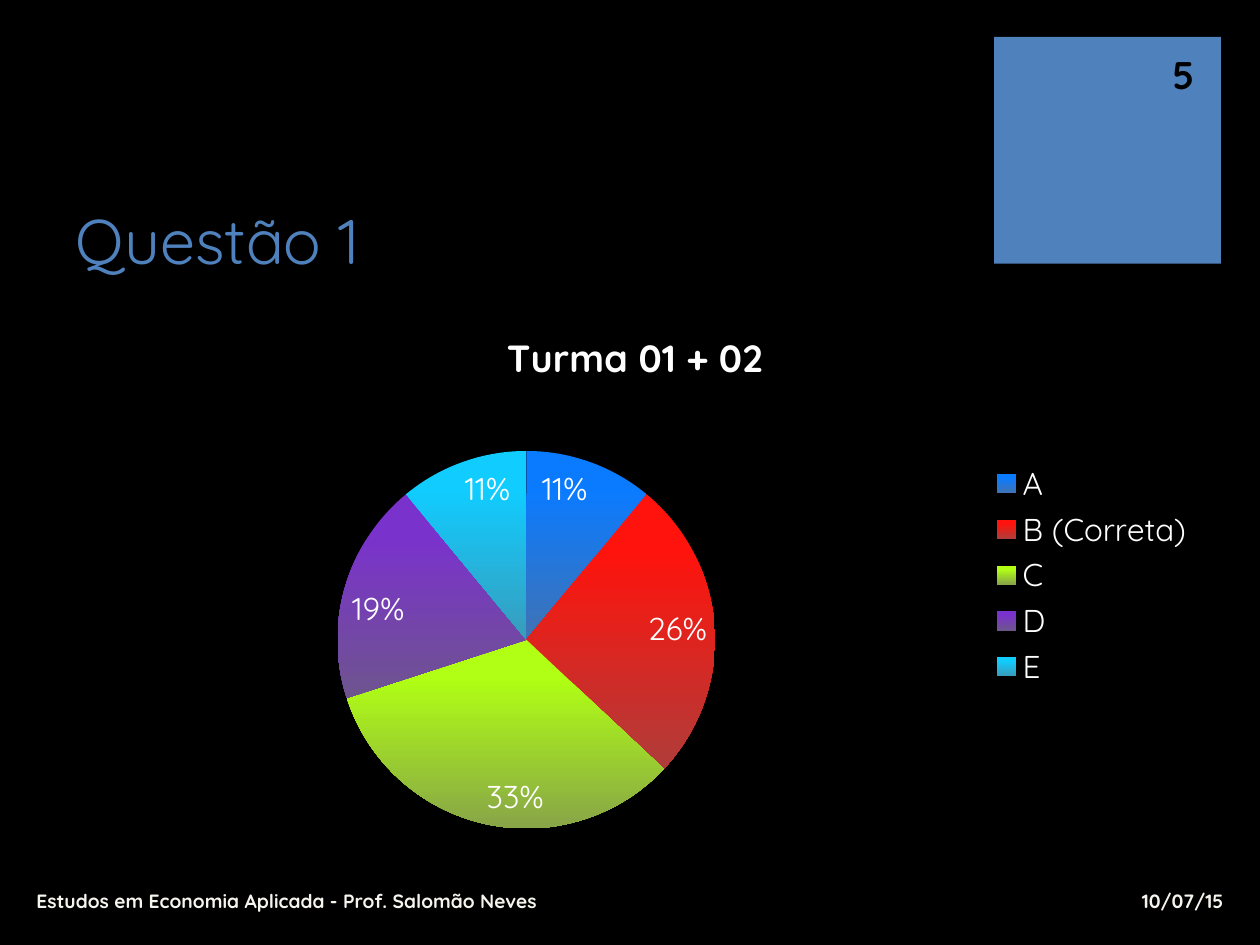
from pptx import Presentation
from pptx import util as u
from pptx.chart import data
from pptx.dml.color import RGBColor
from pptx.enum import chart as ch, shapes, text
from pptx.oxml import parse_xml
from pptx.oxml.ns import nsdecls

WIDE, HIGH = 10, 7.5
FONT = "Quicksand"
HUES = {"back": "000000", "box": "4F81BD", "foot": "F5F4ED", "light": "FFFFFF"}
LEFT, RIGHT = text.PP_ALIGN.LEFT, text.PP_ALIGN.RIGHT
MID, LOW = text.MSO_ANCHOR.MIDDLE, text.MSO_ANCHOR.BOTTOM

TEXTS = [
    ("Questão 1", (0.05, 0.133, 0.712, 0.167), 36, "box", False, LEFT, LOW),
    ("10/07/15", (0.789, 0.927, 0.192, 0.053), 11, "foot", True, RIGHT, MID),
    ("Estudos em Economia Aplicada - Prof. Salomão Neves",
     (0.019, 0.927, 0.657, 0.053), 11, "foot", True, LEFT, MID),
    ("5", (0.903, 0.052, 0.055, 0.053), 22, "back", True, RIGHT, MID),
]
TITLE = "Turma 01 + 02"
SLICES = [
    ("A", 11, "0A7BFF", "4072B4"),
    ("B (Correta)", 26, "FF130C", "B03C3A"),
    ("C", 33, "B0FF14", "88A548"),
    ("D", 19, "7A32CC", "6E548F"),
    ("E", 11, "10CCFF", "389CBC"),
]
PLOT = {"x": 0.24, "y": 0.27, "w": 0.33, "h": 0.7}


def rgb(name):
    return RGBColor.from_string(HUES.get(name, name))


def place(share):
    x, y, w, h = share
    return [u.Inches(n) for n in (x * WIDE, y * HIGH, w * WIDE, h * HIGH)]


def style(font, size, hue, bold=False):
    font.name, font.size, font.bold = FONT, u.Pt(size), bold
    font.color.rgb = rgb(hue)


def write(slide, words, share, size, hue, bold, align, anchor):
    frame = slide.shapes.add_textbox(*place(share)).text_frame
    frame.word_wrap, frame.vertical_anchor = True, anchor
    line = frame.paragraphs[0]
    line.alignment = align
    run = line.add_run()
    run.text = words
    style(run.font, size, hue, bold)


def draw_pie(slide):
    table = data.CategoryChartData()
    table.categories = [row[0] for row in SLICES]
    table.add_series("Series 1", [row[1] for row in SLICES])
    chart = slide.shapes.add_chart(
        ch.XL_CHART_TYPE.PIE, *place((0.05, 0.323, 0.908, 0.571)), table).chart
    style(chart.font, 18, "light")

    chart.has_title = True
    run = chart.chart_title.text_frame.paragraphs[0].add_run()
    run.text = TITLE
    style(run.font, 21.6, "light", True)
    chart.chart_title.include_in_layout = False

    chart.has_legend = True
    chart.legend.position = ch.XL_LEGEND_POSITION.RIGHT
    chart.legend.include_in_layout = False
    style(chart.legend.font, 18, "light")

    plot = chart.plots[0]
    plot.vary_by_categories = True
    plot.has_data_labels = True
    tags = plot.data_labels
    tags.show_percentage, tags.show_value = True, False
    tags.number_format, tags.number_format_is_linked = "0%", False
    tags.position = ch.XL_LABEL_POSITION.INSIDE_END
    style(tags.font, 18, "light")

    for spot, (_, _, top, base) in enumerate(SLICES):
        form = plot.series[0].points[spot].format
        form.line.fill.background()
        form.fill.gradient()
        form.fill.gradient_angle = 270
        for stop, hue, pos in zip(form.fill.gradient_stops, (top, base), (0.2, 1)):
            stop.color.rgb, stop.position = rgb(hue), pos

    area = chart._chartSpace.chart.plotArea
    for old in area.findall("{*}layout"):
        area.remove(old)
    modes = "".join(f'<c:{k}Mode val="edge"/>' for k in "xy")
    sizes = "".join(f'<c:{k} val="{v}"/>' for k, v in PLOT.items())
    area.insert(0, parse_xml(
        f'<c:layout {nsdecls("c")}><c:manualLayout><c:layoutTarget val="inner"/>'
        f'{modes}{sizes}</c:manualLayout></c:layout>'))


def main():
    deck = Presentation()
    deck.slide_width, deck.slide_height = u.Inches(WIDE), u.Inches(HIGH)
    slide = deck.slides.add_slide(deck.slide_layouts[6])
    back = slide.background.fill
    back.solid()
    back.fore_color.rgb = rgb("back")

    box = slide.shapes.add_shape(
        shapes.MSO_SHAPE.RECTANGLE, *place((0.789, 0.039, 0.18, 0.24)))
    box.shadow.inherit = False
    box.fill.solid()
    box.fill.fore_color.rgb = rgb("box")
    box.line.fill.background()

    for item in TEXTS:
        write(slide, *item)
    draw_pie(slide)
    deck.save("out.pptx")


if __name__ == "__main__":
    main()
